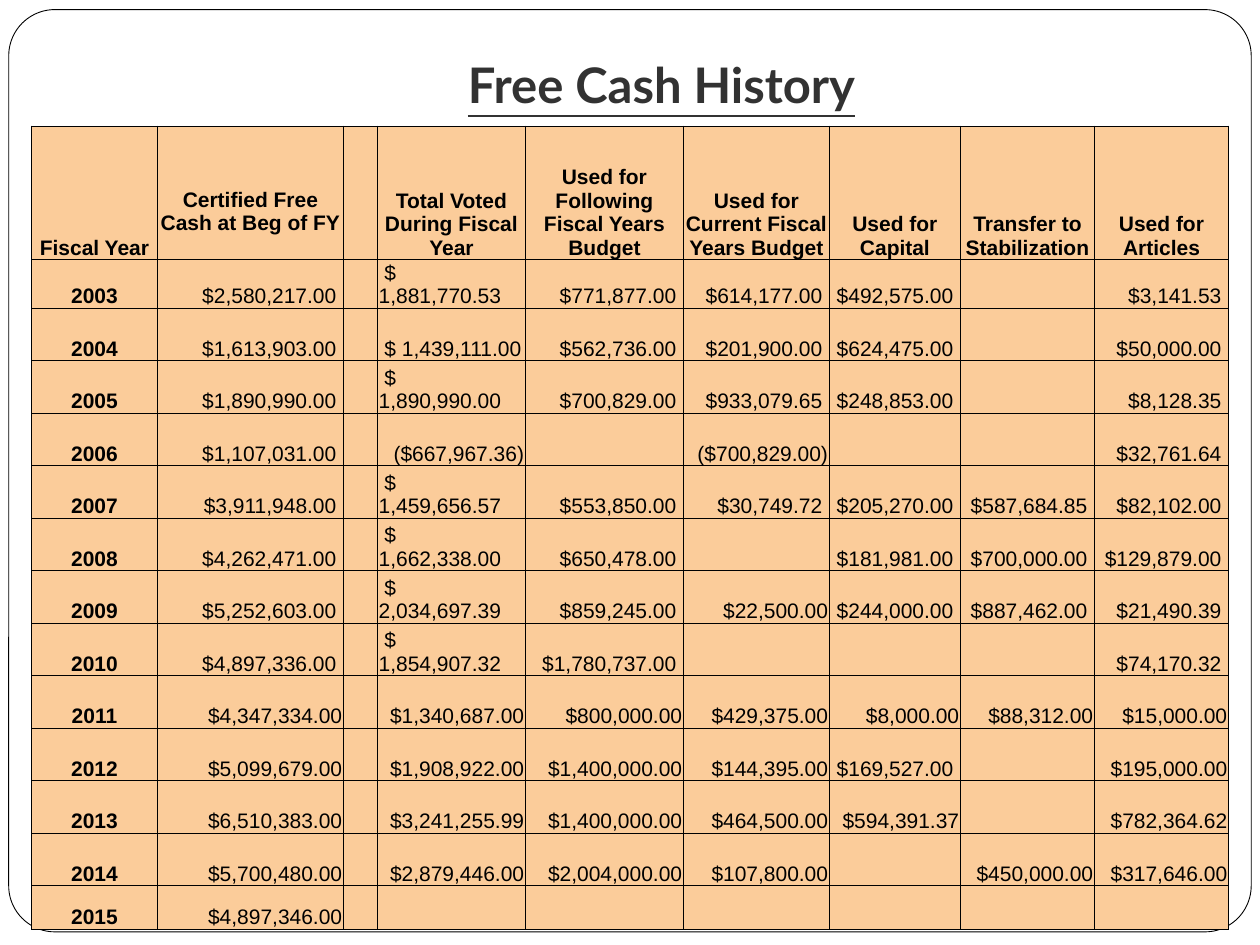
from dataclasses import dataclass
from typing import Any

from lxml import etree
from pptx import Presentation
from pptx.dml import color
from pptx.enum import shapes, text
from pptx.oxml import ns
from pptx.util import Pt

INK = "000000"
PEACH = "FBCC9A"
BORDER_WIDTH = Pt(0.5)
ALIGN = text.PP_ALIGN

COLUMN_WIDTHS = (72, 106.3, 19.4, 84.6, 90.3, 83.4, 74.9, 76.6, 76.6)
ROW_HEIGHTS = (76.5, 25, *[30] * 11, 25)

HEADINGS = (
    "Fiscal Year|Certified Free Cash at Beg of FY||Total Voted During Fiscal Year|"
    "Used for Following Fiscal Years Budget|Used for Current Fiscal Years Budget|"
    "Used for Capital|Transfer to Stabilization|Used for Articles"
)
YEARS = (
    "2003|$2,580,217.00 || $ 1,881,770.53|$771,877.00 |$614,177.00 |$492,575.00 ||$3,141.53 ",
    "2004|$1,613,903.00 || $ 1,439,111.00|$562,736.00 |$201,900.00 |$624,475.00 ||$50,000.00 ",
    "2005|$1,890,990.00 || $ 1,890,990.00|$700,829.00 |$933,079.65 |$248,853.00 ||$8,128.35 ",
    "2006|$1,107,031.00 || ($667,967.36)|| ($700,829.00)|||$32,761.64 ",
    "2007|$3,911,948.00 || $ 1,459,656.57|$553,850.00 |$30,749.72 |$205,270.00 |$587,684.85 |$82,102.00 ",
    "2008|$4,262,471.00 || $ 1,662,338.00|$650,478.00 ||$181,981.00 |$700,000.00 |$129,879.00 ",
    "2009|$5,252,603.00 || $ 2,034,697.39|$859,245.00 |$22,500.00|$244,000.00 |$887,462.00 |$21,490.39 ",
    "2010|$4,897,336.00 || $ 1,854,907.32|$1,780,737.00 ||||$74,170.32 ",
    "2011|$4,347,334.00||$1,340,687.00|$800,000.00|$429,375.00|$8,000.00|$88,312.00|$15,000.00",
    "2012|$5,099,679.00||$1,908,922.00|$1,400,000.00|$144,395.00|$169,527.00 ||$195,000.00",
    "2013|$6,510,383.00||$3,241,255.99|$1,400,000.00|$464,500.00|$594,391.37||$782,364.62",
    "2014|$5,700,480.00||$2,879,446.00|$2,004,000.00|$107,800.00||$450,000.00|$317,646.00",
    "2015|$4,897,346.00|||||||",
)


@dataclass(frozen=True)
class Entry:
    wording: str
    align: Any
    bold: bool
    bottom: float = 0


def rgb(value: str) -> color.RGBColor:
    return color.RGBColor.from_string(value)


def apply(target: Any, values: dict[str, Any]) -> None:
    for key, value in values.items():
        setattr(target, key, value)


def format_run(run: Any, ink: str, **values: Any) -> None:
    apply(run.font, values)
    run.font.color.rgb = rgb(ink)


def read_entry(wording: str, row: int, column: int) -> Entry:
    if row == 0 or column == 0:
        raised = 14 if (row, column) == (0, 1) else 0
        return Entry(wording, ALIGN.CENTER, True, raised)
    align = ALIGN.LEFT if wording.startswith(" $") else ALIGN.RIGHT
    return Entry(wording, align, False)


def draw_borders(cell: Any) -> None:
    properties = cell._tc.get_or_add_tcPr()
    for side in ("lnL", "lnR", "lnT", "lnB"):
        line = etree.SubElement(properties, ns.qn(f"a:{side}"), w=str(BORDER_WIDTH))
        fill = etree.SubElement(line, ns.qn("a:solidFill"))
        etree.SubElement(fill, ns.qn("a:srgbClr"), val=INK)


def draw_cell(cell: Any, entry: Entry) -> None:
    apply(cell, {
        "margin_left": Pt(0.7),
        "margin_right": Pt(0.7),
        "margin_top": Pt(0.7),
        "margin_bottom": Pt(entry.bottom),
        "vertical_anchor": text.MSO_ANCHOR.BOTTOM,
    })
    draw_borders(cell)
    cell.fill.solid()
    cell.fill.fore_color.rgb = rgb(PEACH)
    if entry.wording:
        paragraph = cell.text_frame.paragraphs[0]
        paragraph.alignment = entry.align
        run = paragraph.add_run()
        run.text = entry.wording
        format_run(run, INK, name="Arial", size=Pt(12), bold=entry.bold)


def draw_frame(slide: Any) -> None:
    frame = slide.shapes.add_shape(
        shapes.MSO_SHAPE.ROUNDED_RECTANGLE, Pt(5), Pt(5.5), Pt(710), Pt(527)
    )
    frame.adjustments[0] = 0.05
    frame.shadow.inherit = False
    frame.fill.solid()
    frame.fill.fore_color.rgb = rgb("FFFFFF")
    frame.line.color.rgb = rgb(INK)
    frame.line.width = BORDER_WIDTH
    slide.shapes._spTree.insert(2, frame._element)


def draw_title(slide: Any) -> None:
    title = slide.shapes.title
    apply(title, {"left": Pt(72), "top": Pt(21.6), "width": Pt(612), "height": Pt(50.4)})
    apply(title.text_frame, {
        "margin_left": Pt(7.2),
        "margin_right": Pt(7.2),
        "margin_top": Pt(3.6),
        "margin_bottom": Pt(7.2),
        "vertical_anchor": text.MSO_ANCHOR.BOTTOM,
        "word_wrap": True,
        "auto_size": text.MSO_AUTO_SIZE.NONE,
    })
    paragraph = title.text_frame.paragraphs[0]
    paragraph.alignment = ALIGN.CENTER
    run = paragraph.add_run()
    run.text = "Free Cash History"
    format_run(run, "323232", name="Lato", size=Pt(28), bold=True, underline=True)


def draw_history(slide: Any) -> None:
    history = slide.shapes.add_table(
        len(ROW_HEIGHTS), len(COLUMN_WIDTHS), Pt(18), Pt(72),
        Pt(sum(COLUMN_WIDTHS)), Pt(sum(ROW_HEIGHTS)),
    ).table
    apply(history, {"first_row": False, "horz_banding": False})
    for column, width in zip(history.columns, COLUMN_WIDTHS):
        column.width = Pt(width)
    for row, height in zip(history.rows, ROW_HEIGHTS):
        row.height = Pt(height)
    for row, record in enumerate((HEADINGS, *YEARS)):
        for column, wording in enumerate(record.split("|")):
            draw_cell(history.cell(row, column), read_entry(wording, row, column))


def main() -> None:
    deck = Presentation()
    apply(deck, {"slide_width": Pt(720), "slide_height": Pt(540)})
    slide = deck.slides.add_slide(deck.slide_layouts[5])
    draw_frame(slide)
    draw_title(slide)
    draw_history(slide)
    deck.save("out.pptx")


if __name__ == "__main__":
    main()
